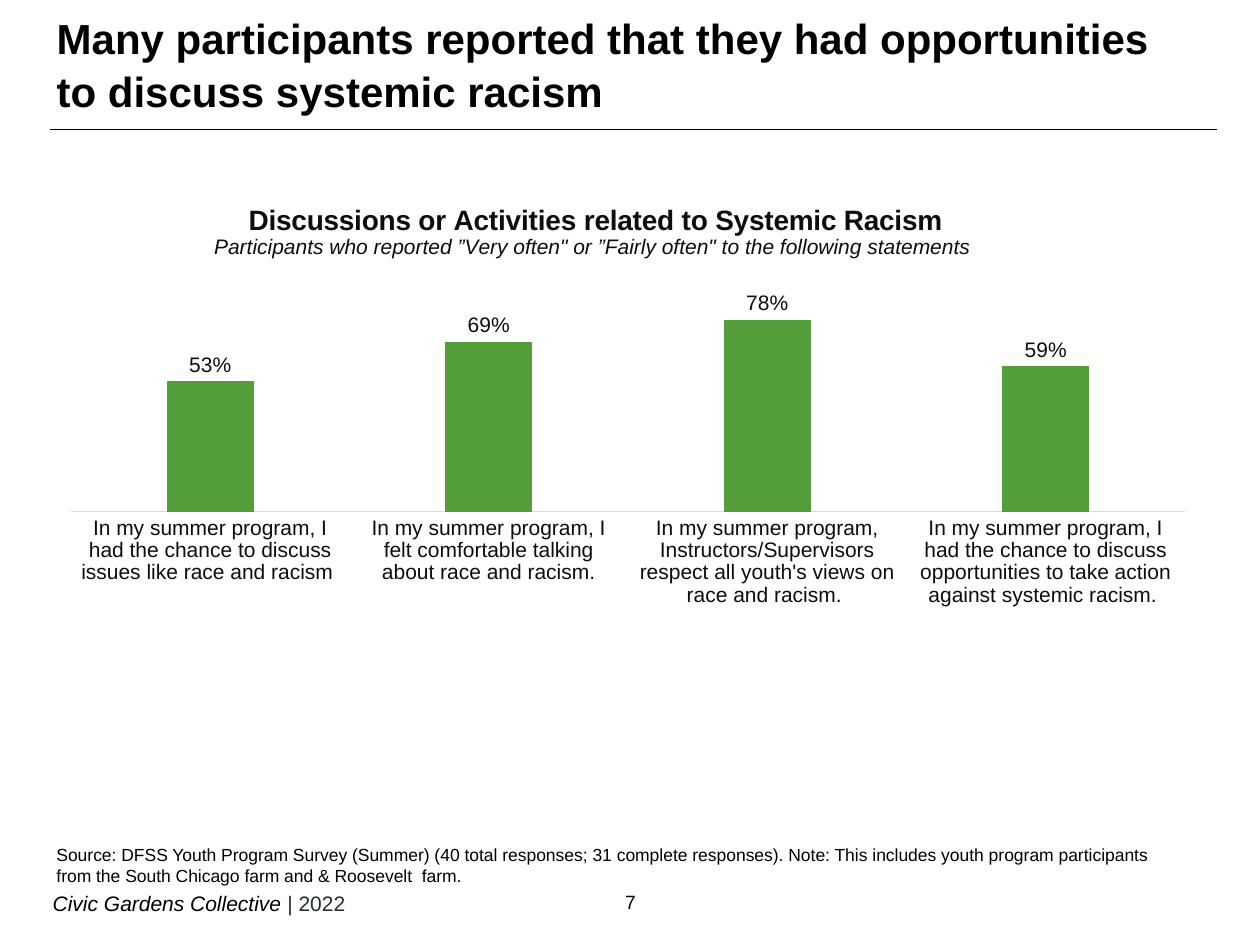
from dataclasses import dataclass

from lxml import etree
from pptx import Presentation
from pptx import util as u
from pptx.chart import data as chart_data
from pptx.dml.color import RGBColor
from pptx.enum import chart as ch
from pptx.enum import text as t
from pptx.oxml import parse_xml
from pptx.oxml.ns import nsdecls, qn

COLORS = {"black": "000000", "slate": "223028", "ink": "0D0D0D",
          "axis": "D9D9D9", "green": "549E39"}
CHART_NS = nsdecls("c")


@dataclass(frozen=True)
class Phrase:
    words: str
    size: float
    color: str = "black"
    bold: bool = False
    italic: bool = False


@dataclass(frozen=True)
class Caption:
    box: tuple[float, float, float, float]
    phrases: tuple[Phrase, ...]
    align: t.PP_ALIGN = t.PP_ALIGN.LEFT


@dataclass(frozen=True)
class Answer:
    statement: str
    share: float


HEADLINE = Phrase("Many participants reported that they had opportunities "
                  "to discuss systemic racism", 24, bold=True)
CAPTIONS = (
    Caption((0.32, 7.02, 4.59, 0.3),
            (Phrase("Civic Gardens Collective ", 12, italic=True),
             Phrase("| 2022", 12, "slate"))),
    Caption((4.67, 7.02, 0.67, 0.29), (Phrase("7", 11),), t.PP_ALIGN.CENTER),
    Caption((0.35, 6.65, 9.13, 0.44),
            (Phrase("Source: DFSS Youth Program Survey (Summer) (40 total responses; "
                    "31 complete responses). Note: This includes youth program "
                    "participants from the South Chicago farm and & Roosevelt  farm.", 10),)),
)
CHART_TITLE = (
    Phrase("Discussions or Activities related to Systemic Racism", 16, "ink", bold=True),
    Phrase("Participants who reported ”Very often\" or ”Fairly often\" "
           "to the following statements ", 12, "ink", italic=True),
)
ANSWERS = (
    Answer("In my summer program, I had the chance to discuss issues like race and racism ", 0.53),
    Answer("In my summer program, I felt comfortable talking about race and racism.", 0.69),
    Answer("In my summer program, Instructors/Supervisors respect all youth's views "
           "on race and racism. ", 0.78),
    Answer("In my summer program, I had the chance to discuss opportunities "
           "to take action against systemic racism. ", 0.59),
)


def apply(target, values: dict) -> None:
    for name, value in values.items():
        setattr(target, name, value)


def style_font(font, phrase: Phrase) -> None:
    apply(font, {"name": "Arial", "size": u.Pt(phrase.size),
                 "bold": phrase.bold, "italic": phrase.italic})
    font.color.rgb = RGBColor.from_string(COLORS[phrase.color])


def write(paragraph, phrases: tuple[Phrase, ...]) -> None:
    for phrase in phrases:
        run = paragraph.add_run()
        run.text = phrase.words
        style_font(run.font, phrase)


def draw_caption(slide, caption: Caption) -> None:
    frame = slide.shapes.add_textbox(*map(u.Inches, caption.box)).text_frame
    frame.word_wrap = True
    frame.paragraphs[0].alignment = caption.align
    write(frame.paragraphs[0], caption.phrases)


def draw_headline(slide) -> None:
    headline = slide.shapes.title
    apply(headline, {"left": u.Inches(0.35), "top": u.Inches(0),
                     "width": u.Inches(9.26), "height": u.Inches(1)})
    apply(headline.text_frame, {"word_wrap": True, "auto_size": t.MSO_AUTO_SIZE.NONE,
                                "vertical_anchor": t.MSO_ANCHOR.MIDDLE})
    apply(headline.text_frame.paragraphs[0],
          {"alignment": t.PP_ALIGN.LEFT, "line_spacing": 1.05})
    write(headline.text_frame.paragraphs[0], (HEADLINE,))


def draw_rule(slide) -> None:
    rule = slide.shapes.add_connector(1, *map(u.Inches, (0.4, 1.03, 9.66, 1.03)))
    rule.line.width = u.Pt(0.75)
    rule.line.color.rgb = RGBColor.from_string(COLORS["black"])
    etree.SubElement(rule.line._ln.getparent(), qn("a:effectLst"))


def layout(inner: bool, **places: float):
    target = '<c:layoutTarget val="inner"/>' if inner else ""
    modes = "".join(f'<c:{key}Mode val="edge"/>' for key in ("x", "y"))
    sizes = "".join(f'<c:{key} val="{value}"/>' for key, value in places.items())
    return parse_xml(f"<c:layout {CHART_NS}><c:manualLayout>{target}{modes}{sizes}"
                     "</c:manualLayout></c:layout>")


def draw_chart(slide) -> None:
    survey = chart_data.CategoryChartData(number_format="0%")
    survey.categories = [answer.statement for answer in ANSWERS]
    survey.add_series("Series 1", [answer.share for answer in ANSWERS])
    chart = slide.shapes.add_chart(ch.XL_CHART_TYPE.COLUMN_CLUSTERED,
                                   *map(u.Inches, (0.38, 1.41, 9.21, 3.49)), survey).chart
    body = Phrase("", 12, "ink")
    style_font(chart.font, body)
    chart.has_legend = False

    heading = chart.chart_title
    heading.include_in_layout = False
    frame = heading.text_frame
    write(frame.paragraphs[0], CHART_TITLE[:1])
    write(frame.add_paragraph(), CHART_TITLE[1:])
    title_xml = heading._element
    for old in title_xml.findall(qn("c:layout")):
        title_xml.remove(old)
    title_xml.find(qn("c:tx")).addnext(layout(False, x=0.14, y=0.05))

    plot_xml = chart._chartSpace.chart.plotArea
    for old in plot_xml.findall(qn("c:layout")):
        plot_xml.remove(old)
    plot_xml.insert(0, layout(True, x=0.02, y=0.2, w=0.96, h=0.56))

    apply(chart.value_axis, {"minimum_scale": 0, "maximum_scale": 1,
                             "has_major_gridlines": False, "visible": False})
    statements = chart.category_axis
    statements.major_tick_mark = ch.XL_TICK_MARK.NONE
    style_font(statements.tick_labels.font, body)
    statements.format.line.width = u.Pt(0.75)
    statements.format.line.color.rgb = RGBColor.from_string(COLORS["axis"])

    bars = chart.plots[0]
    apply(bars, {"gap_width": 219, "overlap": -27, "vary_by_categories": False,
                 "has_data_labels": True})
    apply(bars.data_labels, {"show_value": True, "number_format": "0%",
                             "number_format_is_linked": False,
                             "position": ch.XL_LABEL_POSITION.OUTSIDE_END})
    style_font(bars.data_labels.font, body)
    fill = bars.series[0].format.fill
    fill.solid()
    fill.fore_color.rgb = RGBColor.from_string(COLORS["green"])


def main() -> None:
    deck = Presentation()
    apply(deck, {"slide_width": u.Inches(10), "slide_height": u.Inches(7.5)})
    slide = deck.slides.add_slide(deck.slide_layouts[5])
    draw_rule(slide)
    draw_headline(slide)
    for caption in CAPTIONS:
        draw_caption(slide, caption)
    draw_chart(slide)
    deck.save("out.pptx")


if __name__ == "__main__":
    main()
